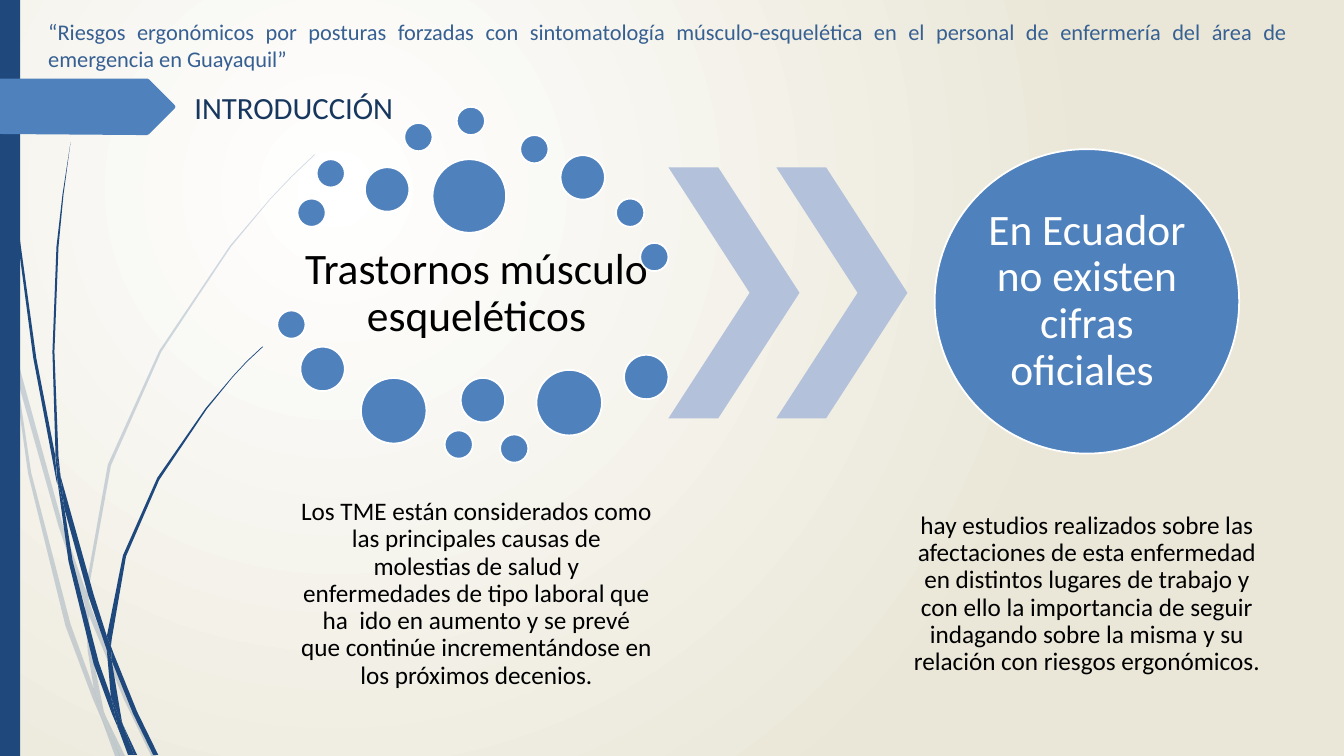
from lxml import etree
from pptx import Presentation
from pptx.dml.color import RGBColor
from pptx.enum.shapes import MSO_SHAPE
from pptx.enum.text import MSO_ANCHOR, MSO_AUTO_SIZE, PP_ALIGN
from pptx.oxml.ns import qn
from pptx.util import Pt

PX = 9144
WIDTH, HEIGHT = 1333, 750
FONT = "Calibri"
RECT, OVAL, CHEVRON = MSO_SHAPE.RECTANGLE, MSO_SHAPE.OVAL, MSO_SHAPE.CHEVRON
TOP, MIDDLE = MSO_ANCHOR.TOP, MSO_ANCHOR.MIDDLE
LEFT, CENTER, JUSTIFY = PP_ALIGN.LEFT, PP_ALIGN.CENTER, PP_ALIGN.JUSTIFY
FIT_SHAPE, NO_FIT = MSO_AUTO_SIZE.SHAPE_TO_FIT_TEXT, MSO_AUTO_SIZE.NONE

WHITE = RGBColor(0xFF, 0xFF, 0xFF)
BLACK = RGBColor(0, 0, 0)
CREAM = RGBColor(0xEA, 0xE7, 0xD8)
NAVY = RGBColor(0x1F, 0x49, 0x7D)
BLUE = RGBColor(0x4F, 0x81, 0xBD)
PALE_BLUE = RGBColor(0xB3, 0xC1, 0xDB)
THEME_BLUE = RGBColor(0x37, 0x60, 0x92)
HEADING_BLUE = RGBColor(0x17, 0x37, 0x5E)

PALE_GRASS = [
    [(11, 350), (9, 322), (0, 282), (0, 299), (10, 344)],
    [(58, 522), (84, 599), (85, 586), (62, 520), (14, 345), (17, 376)],
    [(92, 607), (88, 596), (88, 610), (123, 694), (150, 750), (155, 750), (127, 692)],
    [(119, 750), (124, 750), (105, 711)],
    [(93, 683), (70, 619), (31, 469), (17, 376), (11, 350), (28, 470), (65, 621),
     (92, 693), (101, 714), (99, 707)],
    [(84, 599), (87, 646), (93, 683), (96, 692), (105, 711), (103, 706), (91, 646),
     (88, 610), (88, 608)],
    [(88, 584), (110, 462), (160, 349), (229, 245), (268, 198), (290, 175), (312, 154),
     (312, 153), (289, 175), (268, 197), (228, 244), (158, 348), (107, 461), (85, 584),
     (85, 586), (88, 596)],
    [(101, 714), (114, 750), (119, 750)],
    [(88, 608), (88, 610), (88, 596), (85, 586), (84, 599)],
    [(96, 692), (93, 683), (99, 707), (101, 714), (119, 750), (105, 711)],
]
NAVY_GRASS = [
    [(7, 110), (17, 233), (33, 355), (56, 477), (57, 481), (55, 457), (55, 453),
     (36, 355), (19, 232), (8, 109), (5, 48), (4, 0), (3, 0), (4, 48)],
    [(88, 592), (106, 645), (106, 633), (106, 631), (93, 590), (60, 472), (64, 505)],
    [(113, 649), (110, 641), (111, 656), (132, 708), (152, 749), (157, 749), (136, 706)],
    [(110, 691), (98, 657), (72, 556), (64, 505), (57, 477), (68, 557), (93, 659),
     (111, 708), (117, 722), (116, 717)],
    [(60, 472), (58, 453), (54, 349), (58, 245), (63, 193), (70, 141), (62, 193),
     (56, 245), (52, 349), (55, 449)],
    [(133, 749), (136, 749), (122, 719)],
    [(57, 477), (64, 505), (60, 472), (55, 449), (55, 453)],
    [(111, 633), (125, 552), (158, 476), (205, 406), (231, 374), (245, 359), (261, 344),
     (260, 344), (245, 358), (231, 373), (204, 405), (156, 474), (122, 551), (106, 631),
     (110, 641)],
    [(117, 722), (127, 749), (131, 749)],
    [(106, 645), (110, 691), (116, 706), (122, 719), (121, 716), (111, 656), (109, 651)],
    [(106, 645), (109, 651), (111, 656), (110, 641), (106, 631), (106, 633)],
    [(116, 706), (110, 691), (116, 717), (117, 722), (130, 749), (133, 749), (122, 719)],
]
TITLE_ARROW = [(0, 78), (146, 78), (148, 79), (173, 104), (174, 106), (173, 108),
               (148, 133), (146, 134), (136, 134), (0, 133)]
BUBBLES = {
    28: [(295, 197), (314, 158), (401, 122), (453, 106), (516, 134), (611, 197),
         (635, 241), (275, 308), (441, 427), (496, 431)],
    44: [(362, 166), (556, 154), (298, 344), (457, 375), (619, 352)],
    65: [(358, 375), (532, 367)],
    73: [(429, 158)],
}

THEME = ("“Riesgos ergonómicos por posturas forzadas con sintomatología "
         "músculo-esquelética en el personal de enfermería del área de "
         "emergencia en Guayaquil”")
DISORDERS = ("Los TME están considerados como las principales causas de molestias "
             "de salud y enfermedades de tipo laboral que ha  ido en aumento y se "
             "prevé que continúe incrementándose en los próximos decenios.")
STUDIES = ("hay estudios realizados sobre las afectaciones de esta enfermedad en "
           "distintos lugares de trabajo y con ello la importancia de seguir "
           "indagando sobre la misma y su relación con riesgos ergonómicos.")


class SlideCanvas:
    def __init__(self, slide):
        self.slide = slide
        self.shapes = slide.shapes

    def background(self, inner, outer):
        fill = self.slide.background.fill
        fill.gradient()
        for stop, color in zip(fill.gradient_stops, (inner, outer)):
            stop.color.rgb = color
        gradient = self.slide.element.find(".//" + qn("a:gradFill"))
        gradient.remove(gradient.find(qn("a:lin")))
        circle = etree.SubElement(gradient, qn("a:path"))
        circle.set("path", "circle")
        focus = etree.SubElement(circle, qn("a:fillToRect"))
        for side, share in zip("ltrb", (50, 50, 100, 100)):
            focus.set(side, str(share * 1000))

    def paint(self, shape, color, outline=None):
        shape.shadow.inherit = False
        shape.fill.solid()
        shape.fill.fore_color.rgb = color
        if outline is None:
            shape.line.fill.background()
        else:
            shape.line.color.rgb = outline
            shape.line.width = Pt(1.25)

    def shape(self, preset, box, color, outline=None):
        shape = self.shapes.add_shape(preset, *(side * PX for side in box))
        self.paint(shape, color, outline)
        return shape

    def outline(self, points, color, opacity=100):
        builder = self.shapes.build_freeform(*points[0], scale=PX)
        builder.add_line_segments(points[1:], close=True)
        shape = builder.convert_to_shape()
        self.paint(shape, color)
        if opacity < 100:
            tone = shape.element.spPr.find(qn("a:solidFill"))[0]
            etree.SubElement(tone, qn("a:alpha")).set("val", str(opacity * 1000))

    def text(self, words, box, size, color, align=CENTER, anchor=MIDDLE,
             inset=3, spacing=0.9, fit=NO_FIT):
        frame = self.shapes.add_textbox(*(side * PX for side in box)).text_frame
        frame.word_wrap = True
        frame.auto_size = fit
        frame.vertical_anchor = anchor
        frame.margin_left = frame.margin_right = inset * PX
        frame.margin_top = frame.margin_bottom = min(inset, 5) * PX
        paragraph = frame.paragraphs[0]
        paragraph.text = words
        paragraph.alignment = align
        paragraph.line_spacing = spacing
        paragraph.font.name = FONT
        paragraph.font.size = Pt(size)
        paragraph.font.color.rgb = color

    def heading(self, words, box, size, color, align):
        self.text(words, box, size, color, align, TOP, 10, 1.0, FIT_SHAPE)


def main():
    deck = Presentation()
    deck.slide_width, deck.slide_height = WIDTH * PX, HEIGHT * PX
    canvas = SlideCanvas(deck.slides.add_slide(deck.slide_layouts[6]))
    canvas.background(WHITE, CREAM)

    for blade in PALE_GRASS:
        canvas.outline(blade, NAVY, 20)
    for blade in NAVY_GRASS:
        canvas.outline(blade, NAVY)
    canvas.shape(RECT, (0, 0, 20, HEIGHT), NAVY)
    canvas.outline(TITLE_ARROW, BLUE)

    canvas.heading(THEME, (38, 13, 1249, 64), 16, THEME_BLUE, JUSTIFY)
    canvas.heading("INTRODUCCIÓN", (183, 83, 271, 47), 22, HEADING_BLUE, LEFT)

    canvas.text("Trastornos músculo esqueléticos", (295, 233, 355, 117), 31, BLACK, inset=4)
    canvas.text(DISORDERS, (295, 480, 355, 219), 18, BLACK)
    for diameter, corners in BUBBLES.items():
        for left, top in corners:
            canvas.shape(OVAL, (left, top, diameter, diameter), BLUE, WHITE)

    for left in (663, 770):
        chevron = canvas.shape(CHEVRON, (left, 166, 130, 249), PALE_BLUE)
        chevron.adjustments[0] = 0.62

    canvas.shape(OVAL, (927, 148, 302, 302), BLUE, WHITE)
    canvas.text("En Ecuador no existen cifras oficiales ", (971, 192, 214, 214), 31, WHITE, inset=0)
    canvas.text(STUDIES, (900, 480, 356, 219), 18, BLACK)
    deck.save("out.pptx")


if __name__ == "__main__":
    main()
